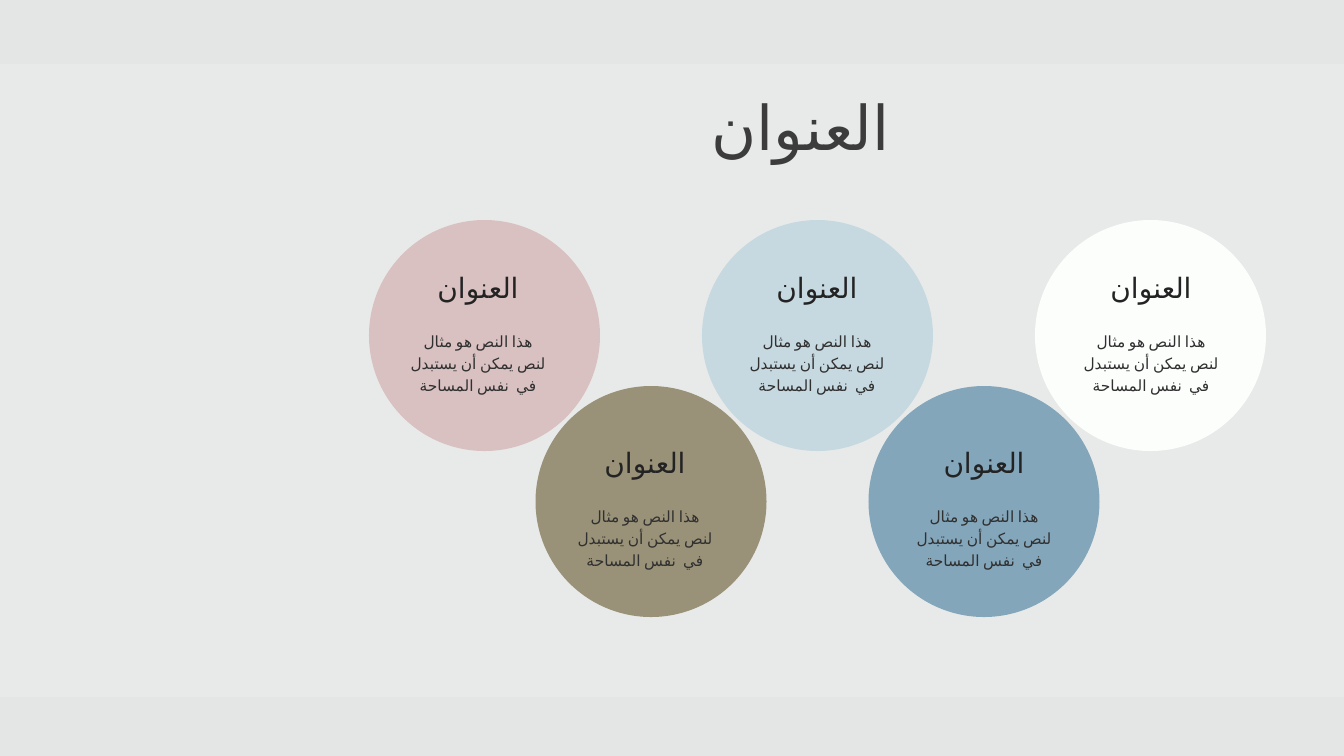
from lxml.etree import SubElement
from pptx import Presentation
from pptx.dml.color import RGBColor
from pptx.enum.lang import MSO_LANGUAGE_ID
from pptx.enum.shapes import MSO_SHAPE
from pptx.enum.text import MSO_ANCHOR, MSO_AUTO_SIZE, PP_ALIGN
from pptx.oxml.ns import qn
from pptx.util import Emu, Pt

BACKGROUND = RGBColor(0xE3, 0xE6, 0xE5)
BAND = RGBColor(0xED, 0xEF, 0xED)
PINK = RGBColor(0xD9, 0xC0, 0xC1)
OLIVE = RGBColor(0x99, 0x92, 0x78)
PALE_BLUE = RGBColor(0xC7, 0xD9, 0xE0)
BLUE = RGBColor(0x84, 0xA6, 0xBB)
WHITE = RGBColor(0xFC, 0xFE, 0xFC)
TITLE_INK = RGBColor(0x3C, 0x3C, 0x3C)
HEADING_INK = RGBColor(0x23, 0x23, 0x23)
BODY_INK = RGBColor(0x30, 0x30, 0x30)

FONT = "Calibri"
TITLE = "العنوان"
HEADING = "العنوان"
BODY = "هذا النص هو مثال لنص يمكن أن يستبدل في  نفس المساحة"
CIRCLES = [
    (PINK, HEADING, BODY, 478),
    (OLIVE, HEADING, BODY, 645),
    (PALE_BLUE, HEADING, BODY, 817),
    (BLUE, HEADING, BODY, 984),
    (WHITE, HEADING, BODY, 1151),
]

SLIDE_WIDTH, SLIDE_HEIGHT = 1344, 756
EMU_PER_PX = 12192000 / SLIDE_WIDTH
DIAMETER = 231
FIRST_LEFT, LAST_LEFT = 369, 1035
CIRCLE_TOPS = (220, 386)
HEADING_TOPS = (266, 441)
HEADING_SIZE = (143, 44)
BODY_TOPS = (323, 498)
BODY_SIZE = (158, 78)


def px(length):
    return Emu(round(length * EMU_PER_PX))


def add_flat_shape(slide, kind, left, top, width, height, color):
    shape = slide.shapes.add_shape(kind, px(left), px(top), px(width), px(height))
    shape.shadow.inherit = False
    shape.fill.solid()
    shape.fill.fore_color.rgb = color
    shape.line.fill.background()
    return shape


def write(box, text, size, color, spacing=1.0, anchor=MSO_ANCHOR.TOP):
    frame = box.text_frame
    frame.word_wrap = True
    frame.auto_size = MSO_AUTO_SIZE.SHAPE_TO_FIT_TEXT
    frame.vertical_anchor = anchor
    para = frame.paragraphs[0]
    para.alignment = PP_ALIGN.CENTER
    para.line_spacing = spacing
    para._p.get_or_add_pPr().set("rtl", "1")
    span = para.add_run()
    span.text = text
    span.font.size = Pt(size)
    span.font.name = FONT
    span.font.color.rgb = color
    span.font.language_id = MSO_LANGUAGE_ID.ARABIC
    SubElement(span.font._element, qn("a:cs")).set("typeface", FONT)


def add_centered_text(slide, center, top, extent, *style):
    width, height = extent
    box = slide.shapes.add_textbox(px(center - width / 2), px(top), px(width), px(height))
    write(box, *style)


def main():
    deck = Presentation()
    deck.slide_width, deck.slide_height = px(SLIDE_WIDTH), px(SLIDE_HEIGHT)
    page = deck.slides.add_slide(deck.slide_layouts[5])
    page.background.fill.solid()
    page.background.fill.fore_color.rgb = BACKGROUND

    band = add_flat_shape(page, MSO_SHAPE.RECTANGLE, 0, 64, SLIDE_WIDTH, 633, BAND)
    band_color = band.fill._xPr.find(qn("a:solidFill"))[0]
    SubElement(band_color, qn("a:alpha")).set("val", "55000")

    step = (LAST_LEFT - FIRST_LEFT) / (len(CIRCLES) - 1)
    for index, (color, *_) in enumerate(CIRCLES):
        add_flat_shape(page, MSO_SHAPE.OVAL, FIRST_LEFT + index * step,
                       CIRCLE_TOPS[index % 2], DIAMETER, DIAMETER, color)

    for index, (_, heading, body, center) in enumerate(CIRCLES):
        row = index % 2
        add_centered_text(page, center, BODY_TOPS[row], BODY_SIZE, body, 11, BODY_INK, 1.2)
        add_centered_text(page, center, HEADING_TOPS[row], HEADING_SIZE, heading, 20, HEADING_INK)

    title = page.shapes.title
    title.left, title.top, title.width, title.height = px(438), px(83), px(725), px(85)
    write(title, TITLE, 44, TITLE_INK, anchor=MSO_ANCHOR.BOTTOM)
    page.shapes._spTree.append(title._element)

    deck.save("out.pptx")


if __name__ == "__main__":
    main()
